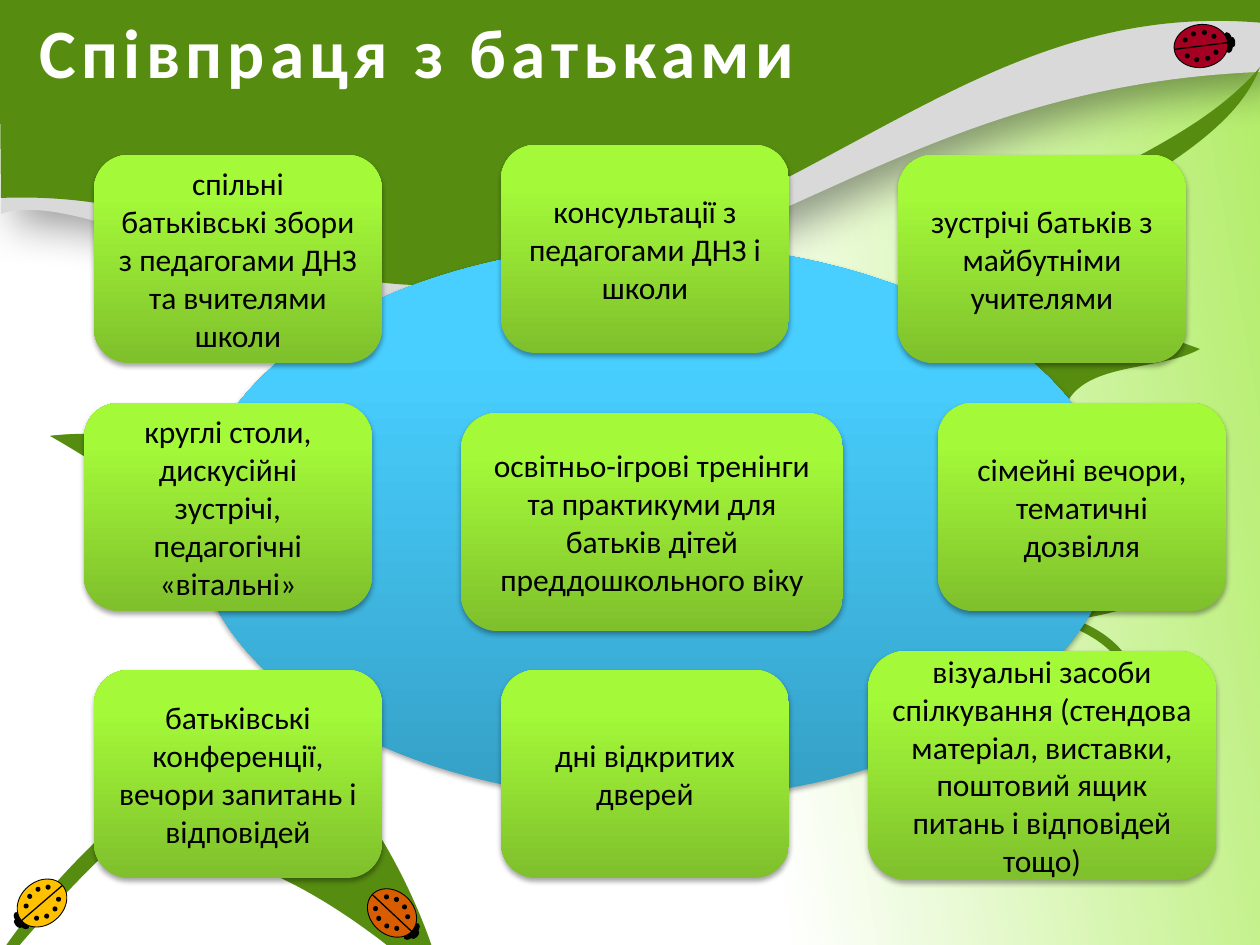
from dataclasses import dataclass
from math import cos, radians, sin

from lxml.etree import SubElement
from pptx import Presentation
from pptx.dml.color import RGBColor
from pptx.enum.shapes import MSO_CONNECTOR as Connector, MSO_SHAPE as Preset
from pptx.enum.text import MSO_ANCHOR as Anchor, PP_ALIGN as Align
from pptx.oxml.ns import qn
from pptx.util import Emu, Pt

PX = 914400 / 126
BLACK, WHITE, LEAF_GREEN = "000000", "FFFFFF", "568D11"
BLUE_STOPS = ((0, "35A0C6"), (0.8, "48CFFF"))
LIME_STOPS = ((0, "7FC02C"), (0.8, "A4F939"))


@dataclass
class Shadow:
    """Opacity in percent, blur and distance in points, direction in degrees."""
    opacity: int
    blur: float
    distance: float
    direction: int


@dataclass
class Outline:
    """Closed outline: two numbers make a line, six make a Bezier curve."""
    start: tuple
    segments: tuple
    color: str = LEAF_GREEN
    shadow: Shadow | None = None


@dataclass
class Ladybug:
    x: int
    y: int
    angle: float
    color: str


@dataclass
class Card:
    x: int
    y: int
    text: str
    width: int = 288
    height: int = 208


BAND_SHADOW = Shadow(40, 25, 12, 45)
SOFT_SHADOW = Shadow(35, 3.1, 1.8, 90)

SCENERY = (
    Outline((1, 214), ((3, 161), (1261, -4), (1260, 72), (910, 86, 764, 272, 472, 304),
                       (267, 307, 77, 186, 1, 214)), "D9D9D9", BAND_SHADOW),
    Outline((1263, 23), ((1265, -1), (1055, -5, 209, -33, -1, 0), (1, 198),
                         (265, 188, 299, 368, 659, 238), (885, 146, 1029, 2, 1263, 23))),
    Outline((1260, 67), ((1137, 212, 828, 205, 890, 503), (878, 238, 1208, 207, 1260, 67))),
    Outline((1061, 427), ((1064, 358, 1153, 375, 1200, 349), (1090, 309),
                          (1038, 297, 989, 340, 1061, 427))),
    Outline((937, 412), ((955, 475, 960, 587, 1063, 612), (1268, 604, 1184, 382, 1063, 509),
                         (1152, 359, 1331, 592, 1063, 621), (971, 612, 935, 513, 937, 412))),
    Outline((1014, 607), ((1052, 622, 1123, 631, 1133, 696), (1116, 816, 982, 755, 1068, 689),
                          (969, 733, 1105, 854, 1138, 696), (1138, 639, 1077, 611, 1014, 607))),
    Outline((296, 718), ((278, 662, 272, 563, 50, 436), (142, 425, 305, 454, 359, 515),
                         (398, 571, 364, 668, 296, 718))),
    Outline((296, 718), ((374, 604, 294, 460, 50, 436), (142, 425, 247, 473, 301, 534),
                         (340, 591, 364, 668, 296, 718))),
    Outline((100, 848), ((159, 847, 256, 823, 445, 994), (427, 903, 349, 757, 273, 726),
                         (208, 704, 127, 767, 100, 848))),
    Outline((100, 848), ((185, 738, 347, 770, 445, 994), (427, 903, 349, 819, 273, 786),
                         (208, 766, 127, 767, 100, 848))),
    Outline((659, 813), ((486, 646, 276, 612, -34, 1011), (52, 845, 241, 704, 393, 660),
                         (522, 635, 663, 655, 659, 813))),
)
LADYBUGS = (
    Ladybug(392, 913, 133.1, "D85C00"),
    Ladybug(42, 903, 229.3, "FFC000"),
    Ladybug(1201, 46, 82.8, "A50021"),
)
HALF_SPOTS = ((8, -14), (13, -5), (13, 6), (8, 15))
CARDS = (
    Card(501, 145, "консультації з педагогами ДНЗ і школи"),
    Card(898, 155, "зустрічі батьків з майбутніми учителями"),
    Card(94, 155, "спільні батьківські збори з педагогами ДНЗ та вчителями школи"),
    Card(501, 670, "дні відкритих дверей"),
    Card(868, 651, "візуальні засоби спілкування (стендова матеріал, виставки, "
                   "поштовий ящик питань і відповідей тощо)", 348, 229),
    Card(84, 403, "круглі столи, дискусійні зустрічі, педагогічні «вітальні»"),
    Card(94, 670, "батьківські конференції, вечори запитань і відповідей"),
    Card(938, 403, "сімейні вечори, тематичні дозвілля"),
    Card(461, 413, "освітньо-ігрові тренінги та практикуми для батьків дітей "
                   "преддошкольного віку", 382, 218),
)


def px(*lengths: float) -> list[Emu]:
    return [Emu(round(length * PX)) for length in lengths]


def rgb(color: str) -> RGBColor:
    return RGBColor.from_string(color)


def paint_solid(fill, color: str) -> None:
    fill.solid()
    fill.fore_color.rgb = rgb(color)


def paint_gradient(fill, stops: tuple, angle: int) -> None:
    fill.gradient()
    fill.gradient_angle = angle
    for stop, (position, color) in zip(fill.gradient_stops, stops):
        stop.position = position
        stop.color.rgb = rgb(color)


def set_shadow(shape, shadow: Shadow | None) -> None:
    shape.shadow.inherit = False
    if shadow is None:
        return
    effects = shape._element.spPr.find(qn("a:effectLst"))
    outer = SubElement(effects, qn("a:outerShdw"), blurRad=str(Pt(shadow.blur)),
                       dist=str(Pt(shadow.distance)), dir=str(shadow.direction * 60000),
                       rotWithShape="0")
    tint = SubElement(outer, qn("a:srgbClr"), val=BLACK)
    SubElement(tint, qn("a:alpha"), val=str(shadow.opacity * 1000))


def bend_segments(shape, segments: tuple) -> None:
    """Join each three straight steps that stand for a curve into one Bezier."""
    steps = iter(list(shape._element.iter(qn("a:lnTo"))))
    for segment in segments:
        first = next(steps)
        if len(segment) == 6:
            first.tag = qn("a:cubicBezTo")
            for _ in range(2):
                control = next(steps)
                first.append(control[0])
                control.getparent().remove(control)


def draw_outline(shapes, outline: Outline) -> None:
    points = [px(*segment[i:i + 2]) for segment in outline.segments
              for i in range(0, len(segment), 2)]
    builder = shapes.build_freeform(*px(*outline.start), scale=1.0)
    builder.add_line_segments(points, close=True)
    shape = builder.convert_to_shape()
    bend_segments(shape, outline.segments)
    paint_solid(shape.fill, outline.color)
    shape.line.fill.background()
    set_shadow(shape, outline.shadow)


def draw_ladybug(slide, bug: Ladybug) -> None:
    shapes = slide.shapes.add_group_shape().shapes
    turn = radians(bug.angle)

    def place(dx: int, dy: int) -> tuple:
        return (bug.x + dx * cos(turn) - dy * sin(turn),
                bug.y + dx * sin(turn) + dy * cos(turn))

    def add_oval(dx: int, dy: int, width: int, height: int, color: str = BLACK):
        x, y = place(dx, dy)
        oval = shapes.add_shape(Preset.OVAL, *px(x - width / 2, y - height / 2, width, height))
        oval.rotation = bug.angle
        paint_solid(oval.fill, color)
        oval.line.fill.background()
        set_shadow(oval, None)
        return oval

    add_oval(0, -27, 21, 10)
    body = add_oval(0, 0, 43, 54, bug.color)
    paint_solid(body.line.fill, BLACK)
    body.line.width = Pt(0.5)
    wing_seam = shapes.add_connector(Connector.STRAIGHT, *px(*place(0, -27), *place(0, 27)))
    paint_solid(wing_seam.line.fill, BLACK)
    wing_seam.line.width = Pt(0.75)
    SubElement(wing_seam._element.spPr, qn("a:effectLst"))
    add_oval(0, -32, 10, 5)
    for side in (-1, 1):
        for dx, dy in HALF_SPOTS:
            add_oval(side * dx, dy, 5, 5)


def write_text(shape, text: str, size: float, color: str, bold: bool = False):
    frame = shape.text_frame
    frame.word_wrap = True
    frame.vertical_anchor = Anchor.MIDDLE
    paragraph = frame.paragraphs[0]
    paragraph.alignment = Align.CENTER
    run = paragraph.add_run()
    run.text = text
    for attribute, value in {"name": "Calibri", "size": Pt(size), "bold": bold}.items():
        setattr(run.font, attribute, value)
    run.font.color.rgb = rgb(color)
    return run


def add_glossy(slide, preset, box: tuple, stops: tuple):
    shape = slide.shapes.add_shape(preset, *px(*box))
    paint_gradient(shape.fill, stops, 90)
    shape.line.fill.background()
    set_shadow(shape, SOFT_SHADOW)
    return shape


def main() -> None:
    deck = Presentation()
    deck.slide_width, deck.slide_height = px(1260, 945)
    slide = deck.slides.add_slide(deck.slide_layouts[6])
    paint_gradient(slide.background.fill, ((0.55, WHITE), (0.99, "B3ED6A")), 10)
    for outline in SCENERY:
        draw_outline(slide.shapes, outline)
    for bug in LADYBUGS:
        draw_ladybug(slide, bug)
    add_glossy(slide, Preset.OVAL, (194, 244, 922, 556), BLUE_STOPS)
    title = slide.shapes.add_textbox(*px(0, 0, 835, 101))
    title_run = write_text(title, "Співпраця з батьками", 39.6, WHITE, bold=True)
    title_run.font._element.set("spc", "300")
    for card in CARDS:
        box = (card.x, card.y, card.width, card.height)
        write_text(add_glossy(slide, Preset.ROUNDED_RECTANGLE, box, LIME_STOPS),
                   card.text, 18, BLACK)
    deck.save("out.pptx")


if __name__ == "__main__":
    main()
